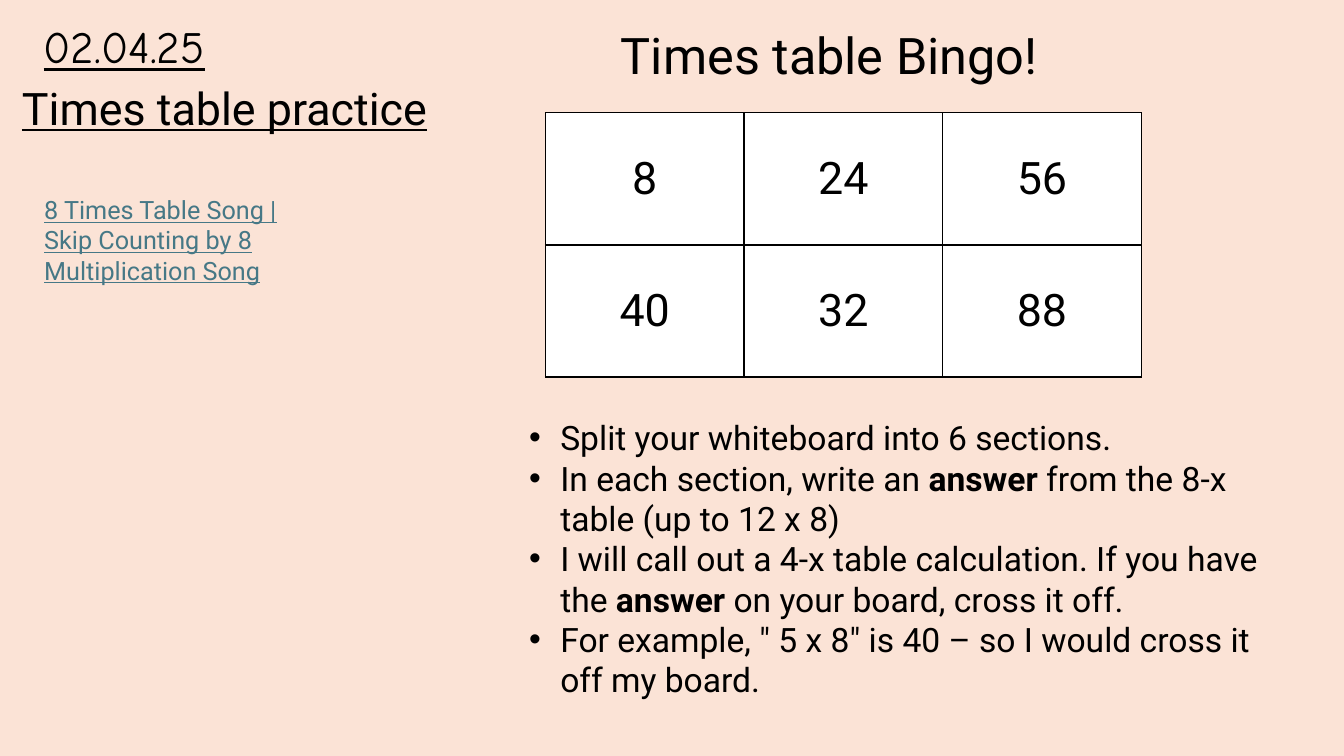
import pptx
import pptx.dml.color
import pptx.enum.text
import pptx.oxml
import pptx.oxml.ns
import pptx.util

PEACH = pptx.dml.color.RGBColor(0xFB, 0xE3, 0xD6)
BLACK = pptx.dml.color.RGBColor(0x00, 0x00, 0x00)
WHITE = pptx.dml.color.RGBColor(0xFF, 0xFF, 0xFF)
TEAL = pptx.dml.color.RGBColor(0x46, 0x78, 0x86)
DRAWING = pptx.oxml.ns.nsdecls("a")
ALIGN = pptx.enum.text.PP_ALIGN

deck = pptx.Presentation()
deck.slide_width = pptx.util.Inches(13.33)
deck.slide_height = pptx.util.Inches(7.5)
page = deck.slides.add_slide(deck.slide_layouts[6])
page.background.fill.solid()
page.background.fill.fore_color.rgb = PEACH


def place(left, top, width, height):
    """Turn percentages of the slide's width and height into lengths."""
    return (int(deck.slide_width * left / 100), int(deck.slide_height * top / 100),
            int(deck.slide_width * width / 100), int(deck.slide_height * height / 100))


def write(frame, text, size=32, font="Roboto", color=BLACK, underline=None,
          align=ALIGN.LEFT, bullet=False):
    """Fill a frame with one paragraph per line; **double stars** mark bold."""
    frame.word_wrap = True
    for number, line in enumerate(text.split("\n")):
        para = frame.add_paragraph() if number else frame.paragraphs[0]
        para.alignment = align
        if bullet:
            indent = pptx.util.Inches(0.31)
            properties = para._p.get_or_add_pPr()
            properties.set("marL", str(indent))
            properties.set("indent", str(-indent))
            properties.append(pptx.oxml.parse_xml(f'<a:buFont {DRAWING} typeface="Arial"/>'))
            properties.append(pptx.oxml.parse_xml(f'<a:buChar {DRAWING} char="•"/>'))
        for part, words in enumerate(line.split("**")):
            span = para.add_run()
            span.text = words
            span.font.size = pptx.util.Pt(size)
            span.font.name = font
            span.font.color.rgb = color
            span.font.underline = underline
            span.font.bold = part % 2 == 1


INSTRUCTIONS = """Split your whiteboard into 6 sections.
In each section, write an **answer** from the 8-x table (up to 12 x 8)
I will call out a 4-x table calculation. If you have the **answer** on your board, cross it off.
For example, " 5 x 8" is 40 – so I would cross it off my board."""

texts = [
    ((0.9, 10, 46.2, 8.27), "Times table practice", dict(underline=True)),
    ((0.9, 1.87, 15.08, 8.13), "02.04.25",
     dict(font="Comic Neue", underline=True, align=ALIGN.RIGHT)),
    ((45.46, 2.53, 34.73, 9.47), "Times table Bingo!", dict(size=36)),
    ((38.63, 54.53, 58.74, 39.07), INSTRUCTIONS, dict(size=24, bullet=True)),
    ((2.55, 25.07, 22.51, 13.47), "8 Times Table Song | Skip Counting by 8 Multiplication Song",
     dict(size=18, color=TEAL, underline=True)),
]
for area, text, style in texts:
    box = page.shapes.add_textbox(*place(*area))
    write(box.text_frame, text, **style)

bingo_numbers = [[8, 24, 56], [40, 32, 88]]
bingo = page.shapes.add_table(2, 3, *place(40.58, 14.93, 3 * 14.78, 2 * 17.47)).table
for row, numbers in enumerate(bingo_numbers):
    for column, number in enumerate(numbers):
        cell = bingo.cell(row, column)
        cell.fill.solid()
        cell.fill.fore_color.rgb = WHITE
        cell.vertical_anchor = pptx.enum.text.MSO_ANCHOR.MIDDLE
        write(cell.text_frame, str(number), align=ALIGN.CENTER)
        for order, side in enumerate("LRTB"):
            border = pptx.oxml.parse_xml(
                f'<a:ln{side} {DRAWING} w="{pptx.util.Pt(1)}"><a:solidFill>'
                f'<a:srgbClr val="{BLACK}"/></a:solidFill></a:ln{side}>')
            cell._tc.get_or_add_tcPr().insert(order, border)

deck.save("out.pptx")
